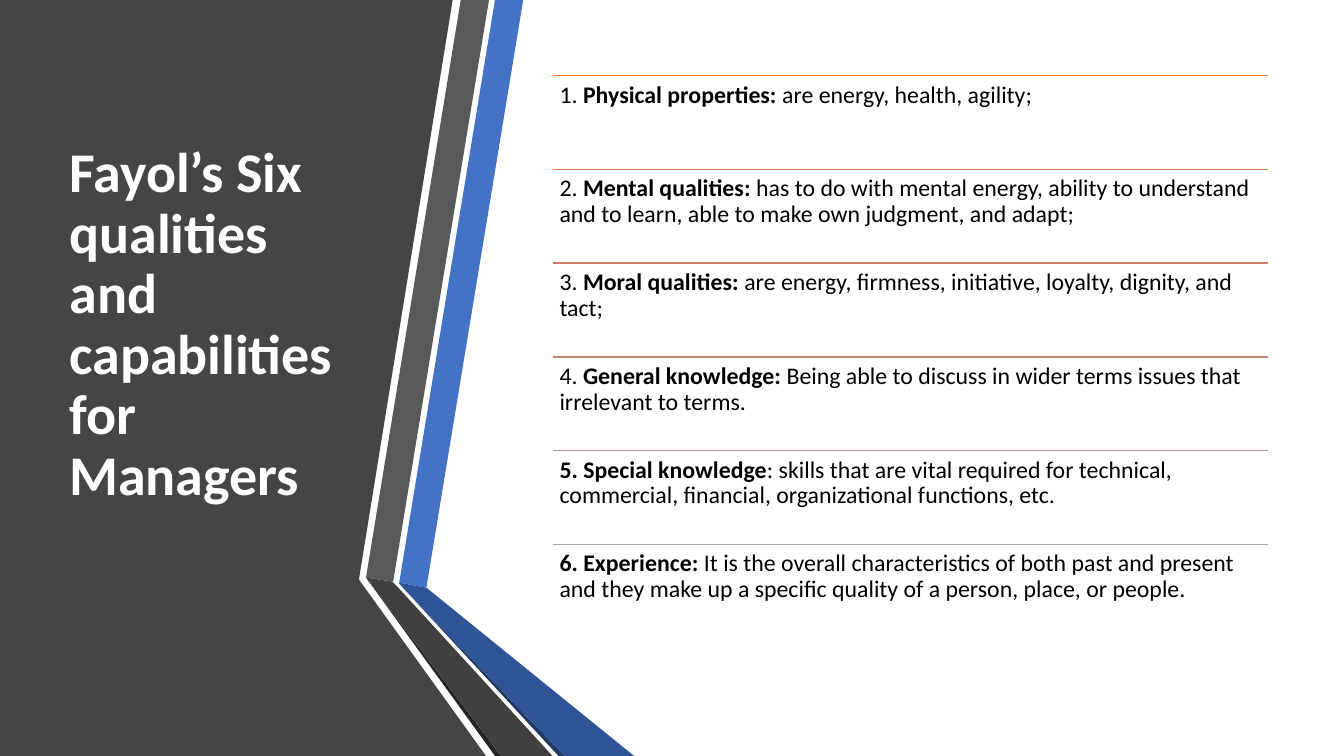
from dataclasses import dataclass

from lxml import etree
from pptx import Presentation
from pptx.dml.color import RGBColor
from pptx.enum.shapes import MSO_CONNECTOR
from pptx.enum.text import MSO_ANCHOR
from pptx.oxml.ns import qn
from pptx.util import Inches, Pt

STRAIGHT = MSO_CONNECTOR.STRAIGHT
TOP, MIDDLE = MSO_ANCHOR.TOP, MSO_ANCHOR.MIDDLE


@dataclass(frozen=True)
class Theme:
    font: str = "Calibri"
    title_size: int = 40
    body_size: int = 17
    rule_width: int = 1
    title_color: str = "FFFFFF"
    body_color: str = "000000"
    panel: str = "454545"
    blue: str = "4472C4"
    blue_fold: str = "2F5597"
    blue_edge: str = "203864"
    gray: str = "595959"
    gray_fold: str = "404040"
    gray_edge: str = "262626"
    rules: tuple = ("ED7D31", "DC7A4B", "CC7D64", "BD867B", "B09391", "A5A5A5")


THEME = Theme()

TITLE = "Fayol’s Six qualities and capabilities for Managers"

# Each quality: (text, bold) runs
QUALITIES = [
    [("1. ", False), ("Physical properties: ", True),
     ("are energy, health, agility;", False)],
    [("2. ", False), ("Mental qualities: ", True),
     ("has to do with mental energy, ability to understand and to learn, "
      "able to make own judgment, and adapt;", False)],
    [("3. ", False), ("Moral qualities: ", True),
     ("are energy, firmness, initiative, loyalty, dignity, and tact;", False)],
    [("4. ", False), ("General knowledge: ", True),
     ("Being able to discuss in wider terms issues that irrelevant to terms.",
      False)],
    [("5. Special knowledge", True),
     (": skills that are vital required for technical, commercial, financial, "
      "organizational functions, etc.", False)],
    [("6. Experience:", True),
     (" It is the overall characteristics of both past and present and they "
      "make up a specific quality of a person, place, or people.", False)],
]

# Side panel and folded ribbons, back to front: (fill, corner points in inches)
PANELS = [
    (THEME.panel, [(0, 0), (4.49, 0), (3.56, 5.75), (4.82, 7.5), (0, 7.5)]),
    (THEME.blue, [(3.96, 5.78), (4.23, 5.83), (5.19, 0), (4.91, 0)]),
    (THEME.gray, [(4.85, 0), (4.57, 0), (3.63, 5.73), (3.9, 5.77)]),
    (THEME.gray_edge, [(3.63, 5.73), (4.91, 7.5), (4.97, 7.5)]),
    (THEME.blue_edge, [(3.96, 5.79), (5.54, 7.5), (5.6, 7.5)]),
    (THEME.blue_fold, [(3.96, 5.78), (3.96, 5.79), (5.6, 7.5), (6.29, 7.5),
                       (4.23, 5.83)]),
    (THEME.gray_fold, [(5.48, 7.5), (3.95, 5.83), (3.89, 5.77), (3.63, 5.73),
                       (4.97, 7.5)]),
]

LIST_LEFT, LIST_TOP, LIST_WIDTH, ROW_HEIGHT = 5.48, 0.75, 7.1, 0.93


def add_panel(slide, color, points):
    start, *rest = [(Inches(x), Inches(y)) for x, y in points]
    builder = slide.shapes.build_freeform(*start)
    builder.add_line_segments(rest, close=True)
    sp = builder.convert_to_shape()
    sp.shadow.inherit = False
    sp.fill.solid()
    sp.fill.fore_color.rgb = RGBColor.from_string(color)
    sp.line.fill.background()


def add_rule(slide, y, color):
    line = slide.shapes.add_connector(
        STRAIGHT, Inches(LIST_LEFT), Inches(y),
        Inches(LIST_LEFT + LIST_WIDTH), Inches(y))
    line.line.color.rgb = RGBColor.from_string(color)
    line.line.width = Pt(THEME.rule_width)
    etree.SubElement(line._element.spPr, qn("a:effectLst"))


def add_text(slide, box, runs, size, color, anchor, insets):
    """Add one paragraph of (text, bold) runs; insets go left, top, right, bottom."""
    tf = slide.shapes.add_textbox(*map(Inches, box)).text_frame
    tf.word_wrap = True
    tf.vertical_anchor = anchor
    (tf.margin_left, tf.margin_top,
     tf.margin_right, tf.margin_bottom) = map(Inches, insets)
    p = tf.paragraphs[0]
    p.line_spacing = 0.9
    p.font.name = THEME.font
    p.font.size = Pt(size)
    p.font.color.rgb = RGBColor.from_string(color)
    for text, bold in runs:
        r = p.add_run()
        r.text = text
        r.font.bold = bold


def main():
    prs = Presentation()
    prs.slide_width, prs.slide_height = Inches(13.33), Inches(7.5)
    slide = prs.slides.add_slide(prs.slide_layouts[6])

    for color, points in PANELS:
        add_panel(slide, color, points)

    # The deep bottom inset lifts the title above the middle of its box
    add_text(slide, (0.59, 0.75, 3.04, 5.58), [(TITLE, True)],
             THEME.title_size, THEME.title_color, MIDDLE, (0.1, 0.05, 0.1, 0.66))

    for i, (runs, color) in enumerate(zip(QUALITIES, THEME.rules)):
        y = LIST_TOP + i * ROW_HEIGHT
        add_rule(slide, y, color)
        add_text(slide, (LIST_LEFT, y, LIST_WIDTH, ROW_HEIGHT), runs,
                 THEME.body_size, THEME.body_color, TOP, (0.07,) * 4)

    prs.save("out.pptx")


if __name__ == "__main__":
    main()
